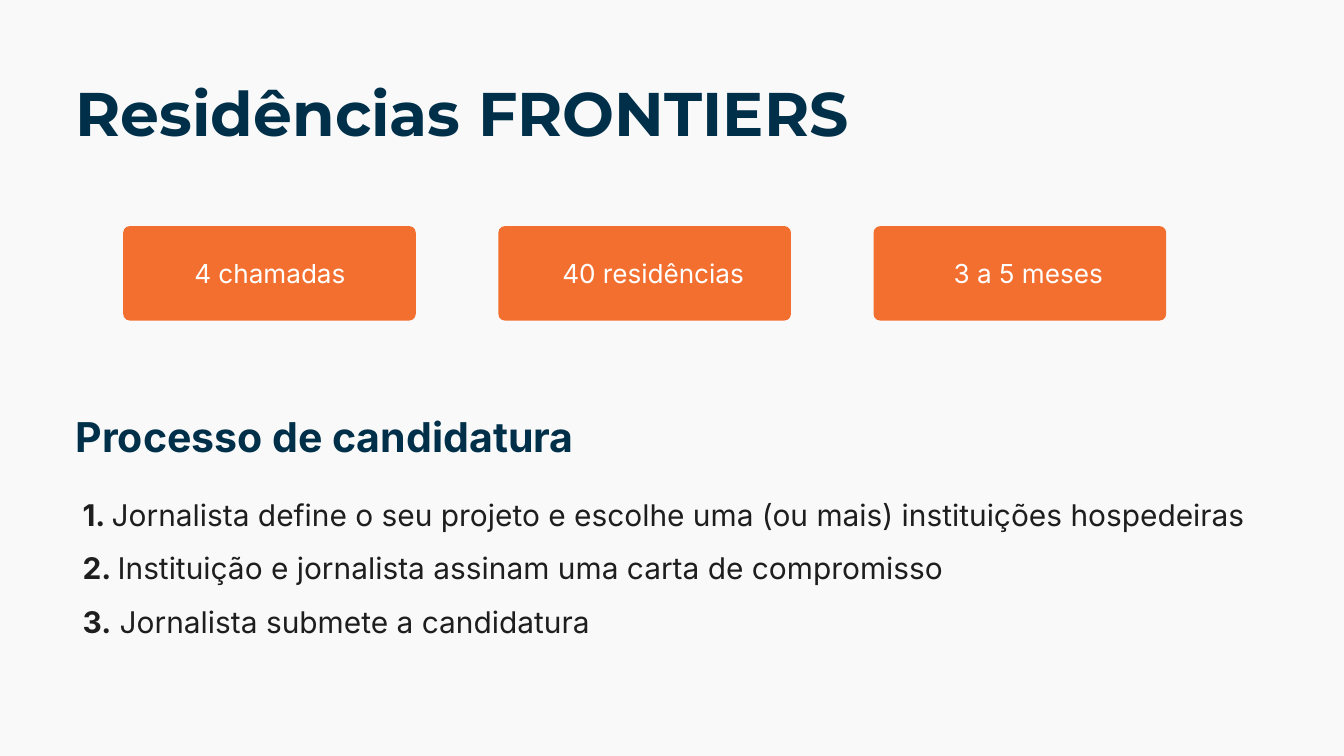
from lxml import etree
from pptx import Presentation
from pptx.dml.color import RGBColor
from pptx.enum.shapes import MSO_SHAPE
from pptx.enum.text import MSO_ANCHOR, MSO_AUTO_SIZE, PP_ALIGN
from pptx.oxml.ns import qn
from pptx.util import Pt

EMU_PER_PX = 9525
ROUNDED = MSO_SHAPE.ROUNDED_RECTANGLE
TOP = MSO_ANCHOR.TOP
NO_AUTOFIT = MSO_AUTO_SIZE.NONE
LEFT, CENTER = PP_ALIGN.LEFT, PP_ALIGN.CENTER

NAVY, ORANGE, INK, WHITE, PAPER = "003049", "F36F2F", "1E1E1E", "FFFFFF", "F9F9F9"
CARD_LEFT, CARD_TOP, CARD_STEP = 176, 323, 536
CARD_WIDTH, CARD_HEIGHT = 418, 135
FACTS = [("4 chamadas", 245, 281), ("40 residências", 758, 350), ("3 a 5 meses", 1294, 350)]
STEPS = [
    ("1. ", "Jornalista define o seu projeto e escolhe uma (ou mais) instituições hospedeiras"),
    ("2. ", "Instituição e jornalista assinam uma carta de compromisso"),
    ("3.", " Jornalista submete a candidatura"),
]


def px(length):
    """Turn pixels into EMU."""
    return length * EMU_PER_PX


def paint(fill, color):
    """Make a fill solid in a hex colour."""
    fill.solid()
    fill.fore_color.rgb = RGBColor.from_string(color)


def style(span, size, color, bold=False, name="Inter"):
    """Format one run."""
    span.font.size = Pt(size)
    span.font.name = name
    span.font.bold = bold
    span.font.color.rgb = RGBColor.from_string(color)


def place(box, left, top, width, height):
    """Move and size a shape."""
    box.left, box.top, box.width, box.height = map(px, (left, top, width, height))


def prepare(box, inset_x=0, inset_y=0):
    """Give a text frame wrapping, top anchoring and its insets."""
    frame = box.text_frame
    frame.word_wrap = True
    frame.auto_size = NO_AUTOFIT
    frame.vertical_anchor = TOP
    frame.margin_left = frame.margin_right = px(inset_x)
    frame.margin_top = frame.margin_bottom = px(inset_y)
    return frame


def write_line(box, text, size, color, bold=False, name="Inter", align=LEFT):
    """Fill a box with one formatted line."""
    frame = prepare(box)
    frame.text = text
    para = frame.paragraphs[0]
    para.alignment = align
    style(para.runs[0], size, color, bold, name)


def add_label(page, bounds, text, size, color, bold=False, align=LEFT):
    """Add a text box with one line."""
    box = page.shapes.add_textbox(*map(px, bounds))
    write_line(box, text, size, color, bold, align=align)


def add_card(page, left):
    """Add a rounded orange card."""
    card = page.shapes.add_shape(ROUNDED, *map(px, (left, CARD_TOP, CARD_WIDTH, CARD_HEIGHT)))
    card.adjustments[0] = 0.07
    card.shadow.inherit = False
    card.line.fill.background()
    paint(card.fill, ORANGE)


def write_steps(box):
    """Write the steps with bold numbers and no bullets."""
    frame = prepare(box, 10, 5)
    for index, step in enumerate(STEPS):
        para = frame.add_paragraph() if index else frame.paragraphs[0]
        para.alignment = LEFT
        para.space_before = Pt(0)
        para.space_after = Pt(19)
        properties = para._p.get_or_add_pPr()
        properties.set("marL", "0")
        properties.set("indent", "0")
        etree.SubElement(properties, qn("a:buNone"))
        for text, bold in zip(step, (True, False)):
            span = para.add_run()
            span.text = text
            style(span, 32, INK, bold)


def main():
    """Build and save the slide."""
    deck = Presentation()
    deck.slide_width, deck.slide_height = px(1920), px(1080)
    page = deck.slides.add_slide(deck.slide_layouts[1])
    paint(page.background.fill, PAPER)

    title, body = page.placeholders
    place(title, 108, 107, 1704, 107)
    write_line(title, "Residências FRONTIERS", 66, NAVY, True, "Montserrat")
    place(body, 108, 704, 1770, 217)
    write_steps(body)

    for index, (text, left, width) in enumerate(FACTS):
        add_card(page, CARD_LEFT + index * CARD_STEP)
        add_label(page, (left, 368, width, 45), text, 28, WHITE, align=CENTER)
    add_label(page, (108, 588, 1275, 71), "Processo de candidatura", 44, NAVY, True)

    deck.save("out.pptx")


if __name__ == "__main__":
    main()
